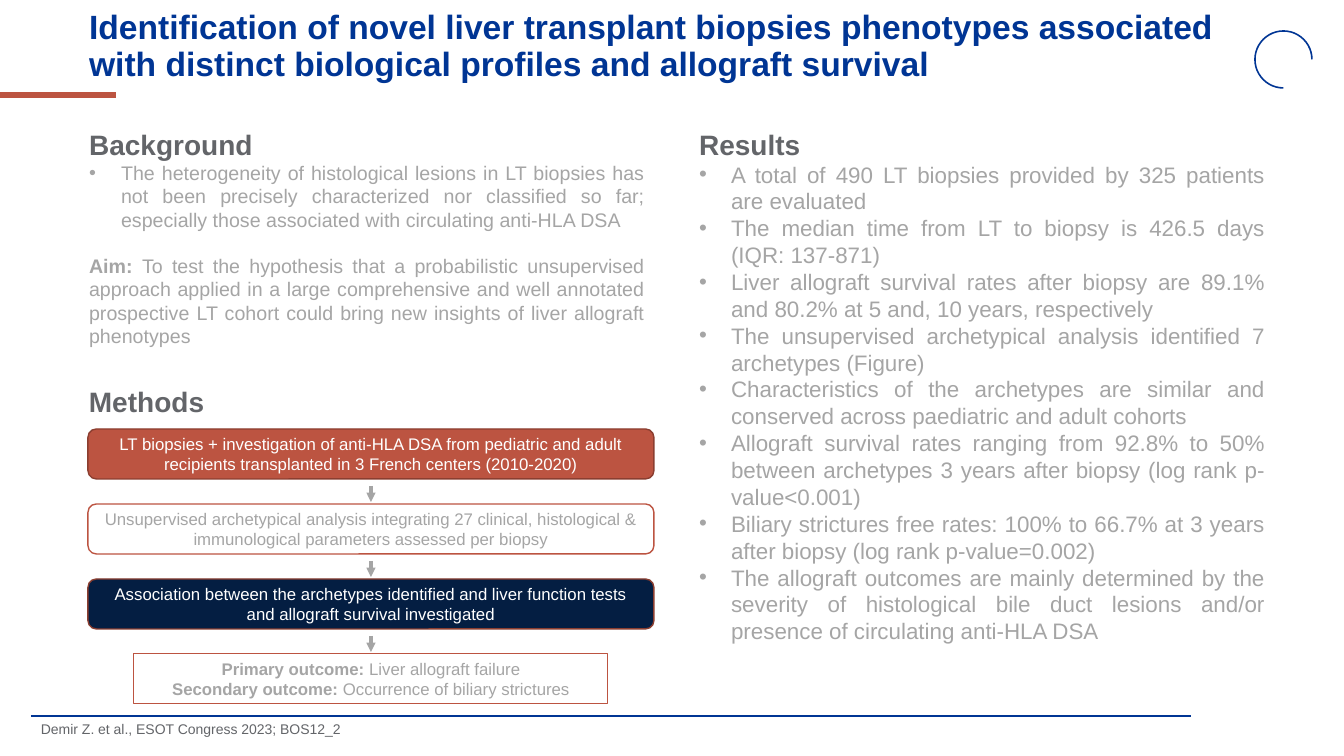
from lxml import etree
from pptx import Presentation
from pptx.dml.color import RGBColor
from pptx.enum.shapes import MSO_CONNECTOR, MSO_SHAPE
from pptx.enum.text import MSO_ANCHOR, MSO_AUTO_SIZE, PP_ALIGN
from pptx.oxml.ns import qn
from pptx.util import Pt

BLUE = RGBColor(0x00, 0x35, 0x94)
NAVY = RGBColor(0x04, 0x1E, 0x42)
RUST = RGBColor(0xBC, 0x54, 0x41)
DARK_RUST = RGBColor(0x8B, 0x3E, 0x30)
SLATE = RGBColor(0x63, 0x65, 0x69)
GREY = RGBColor(0xA5, 0xA5, 0xA5)
WHITE = RGBColor(0xFF, 0xFF, 0xFF)

TITLE = ("Identification of novel liver transplant biopsies phenotypes associated "
         "with distinct biological profiles and allograft survival")
CITATION = "Demir Z. et al., ESOT Congress 2023; BOS12_2"
BACKGROUND = [
    "The heterogeneity of histological lesions in LT biopsies has not been precisely "
    "characterized nor classified so far; especially those associated with circulating "
    "anti-HLA DSA",
]
AIM = ("Aim: ", "To test the hypothesis that a probabilistic unsupervised approach applied "
       "in a large comprehensive and well annotated prospective LT cohort could bring new "
       "insights of liver allograft phenotypes")
RESULTS = [
    "A total of 490 LT biopsies provided by 325 patients are evaluated",
    "The median time from LT to biopsy is 426.5 days (IQR: 137-871)",
    "Liver allograft survival rates after biopsy are 89.1% and 80.2% at 5 and, 10 years, "
    "respectively",
    "The unsupervised archetypical analysis identified 7 archetypes (Figure)",
    "Characteristics of the archetypes are similar and conserved across paediatric and "
    "adult cohorts",
    "Allograft survival rates ranging from 92.8% to 50% between archetypes 3 years after "
    "biopsy (log rank p-value<0.001)",
    "Biliary strictures free rates: 100% to 66.7% at 3 years after biopsy "
    "(log rank p-value=0.002)",
    "The allograft outcomes are mainly determined by the severity of histological bile duct "
    "lesions and/or presence of circulating anti-HLA DSA",
]
# text, fill, outline, text colour
METHOD_STEPS = [
    ("LT biopsies + investigation of anti-HLA DSA from pediatric and adult recipients "
     "transplanted in 3 French centers (2010-2020)", RUST, DARK_RUST, WHITE),
    ("Unsupervised archetypical analysis integrating 27 clinical, histological & "
     "immunological parameters assessed per biopsy", WHITE, RUST, GREY),
    ("Association between the archetypes identified and liver function tests and allograft "
     "survival investigated", NAVY, DARK_RUST, WHITE),
]
OUTCOMES = [
    ("Primary outcome: ", "Liver allograft failure"),
    ("Secondary outcome: ", "Occurrence of biliary strictures"),
]

PX = 914400 / 100.8
BULLET_INDENT = 32
STEP_LEFT, STEP_TOP, STEP_WIDTH, STEP_HEIGHT, STEP_PITCH = 88, 429, 566, 50, 75
STEP_CENTRE = STEP_LEFT + STEP_WIDTH // 2
OUTCOME_WIDTH = 474
ARROW_START, ARROW_LENGTH = 57, 16


def px(*lengths):
    return [round(length * PX) for length in lengths]


def place(placeholder, *box):
    placeholder.left, placeholder.top, placeholder.width, placeholder.height = px(*box)
    frame = placeholder.text_frame
    frame.auto_size = MSO_AUTO_SIZE.NONE
    return frame


def text_box(*box):
    frame = slide.shapes.add_textbox(*px(*box)).text_frame
    frame.word_wrap = True
    return frame


def write(paragraph, content, size, colour, bold=False, align=PP_ALIGN.LEFT,
          bullet=False, before=0):
    """Fill a paragraph from a string, or from a (bold lead, plain rest) pair."""
    paragraph.alignment = align
    paragraph.space_before = Pt(before)
    properties = paragraph._p.get_or_add_pPr()
    indent, = px(BULLET_INDENT if bullet else 0)
    properties.set("marL", str(indent))
    properties.set("indent", str(-indent))
    if bullet:
        etree.SubElement(properties, qn("a:buChar")).set("char", "•")
    else:
        etree.SubElement(properties, qn("a:buNone"))
    font = paragraph.font
    font.name, font.size = "Arial", Pt(size)
    font.color.rgb = colour
    if isinstance(content, str):
        font.bold = bold
        paragraph.add_run().text = content
    else:
        for part, is_lead in zip(content, (True, False)):
            run = paragraph.add_run()
            run.text = part
            run.font.bold = is_lead


def write_section(frame, heading, bullets, size):
    write(frame.paragraphs[0], heading, 20, SLATE, bold=True)
    for bullet in bullets:
        write(frame.add_paragraph(), bullet, size, GREY, align=PP_ALIGN.JUSTIFY, bullet=True)


def add_line(x1, y1, x2, y2, colour, width, arrow=False):
    line = slide.shapes.add_connector(MSO_CONNECTOR.STRAIGHT, *px(x1, y1, x2, y2))
    line.line.color.rgb = colour
    line.line.width = Pt(width)
    if arrow:
        etree.SubElement(line.line._get_or_add_ln(), qn("a:tailEnd")).set("type", "triangle")
    etree.SubElement(line._element.spPr, qn("a:effectLst"))


def add_outline(kind, box, colour, width, fill=None):
    shape = slide.shapes.add_shape(kind, *px(*box))
    shape.shadow.inherit = False
    if fill is None:
        shape.fill.background()
    else:
        shape.fill.solid()
        shape.fill.fore_color.rgb = fill
    shape.line.color.rgb = colour
    shape.line.width = Pt(width)
    shape.text_frame.word_wrap = True
    shape.text_frame.vertical_anchor = MSO_ANCHOR.MIDDLE
    return shape


prs = Presentation()
prs.slide_width, prs.slide_height = px(1344, 756)
slide = prs.slides.add_slide(prs.slide_layouts[3])
title, left_body, right_body = slide.placeholders

# Frame of the slide
add_line(0, 95, 116, 95, RUST, 4.5)
add_line(31, 716, 1191, 716, BLUE, 1.5)
arc = add_outline(MSO_SHAPE.ARC, (1255, 31, 57, 57), BLUE, 1.13)
arc.adjustments[0], arc.adjustments[1] = 54, 0  # from 90° clockwise to 0°

title_frame = place(title, 79, 10, 1159, 74)
title_frame.vertical_anchor = MSO_ANCHOR.MIDDLE
title_frame.paragraphs[0].line_spacing = 0.9
write(title_frame.paragraphs[0], TITLE, 24, BLUE, bold=True)
citation_frame = text_box(31, 717, 790, 34)
citation_frame.paragraphs[0].line_spacing = 0.9
write(citation_frame.paragraphs[0], CITATION, 10, SLATE)

# Text sections
background_frame = place(left_body, 79, 122, 576, 234)
write_section(background_frame, "Background", BACKGROUND, 14)
write(background_frame.add_paragraph(), AIM, 14, GREY, align=PP_ALIGN.JUSTIFY, before=16)
write_section(place(right_body, 689, 122, 586, 532), "Results", RESULTS, 16)
write_section(text_box(79, 380, 167, 44), "Methods", [], 14)

# Methods flow
for index, (step, fill, outline, colour) in enumerate(METHOD_STEPS):
    top = STEP_TOP + index * STEP_PITCH
    box = add_outline(MSO_SHAPE.ROUNDED_RECTANGLE,
                      (STEP_LEFT, top, STEP_WIDTH, STEP_HEIGHT), outline, 1, fill)
    write(box.text_frame.paragraphs[0], step, 12, colour, align=PP_ALIGN.CENTER)
    arrow_top = top + ARROW_START
    add_line(STEP_CENTRE, arrow_top, STEP_CENTRE, arrow_top + ARROW_LENGTH, GREY, 2.25,
             arrow=True)

outcome_top = STEP_TOP + len(METHOD_STEPS) * STEP_PITCH
outcome_frame = add_outline(
    MSO_SHAPE.RECTANGLE,
    (STEP_CENTRE - OUTCOME_WIDTH // 2, outcome_top, OUTCOME_WIDTH, STEP_HEIGHT),
    RUST, 0.75).text_frame
for index, outcome in enumerate(OUTCOMES):
    paragraph = outcome_frame.add_paragraph() if index else outcome_frame.paragraphs[0]
    write(paragraph, outcome, 12, GREY, align=PP_ALIGN.CENTER)

prs.save("out.pptx")
